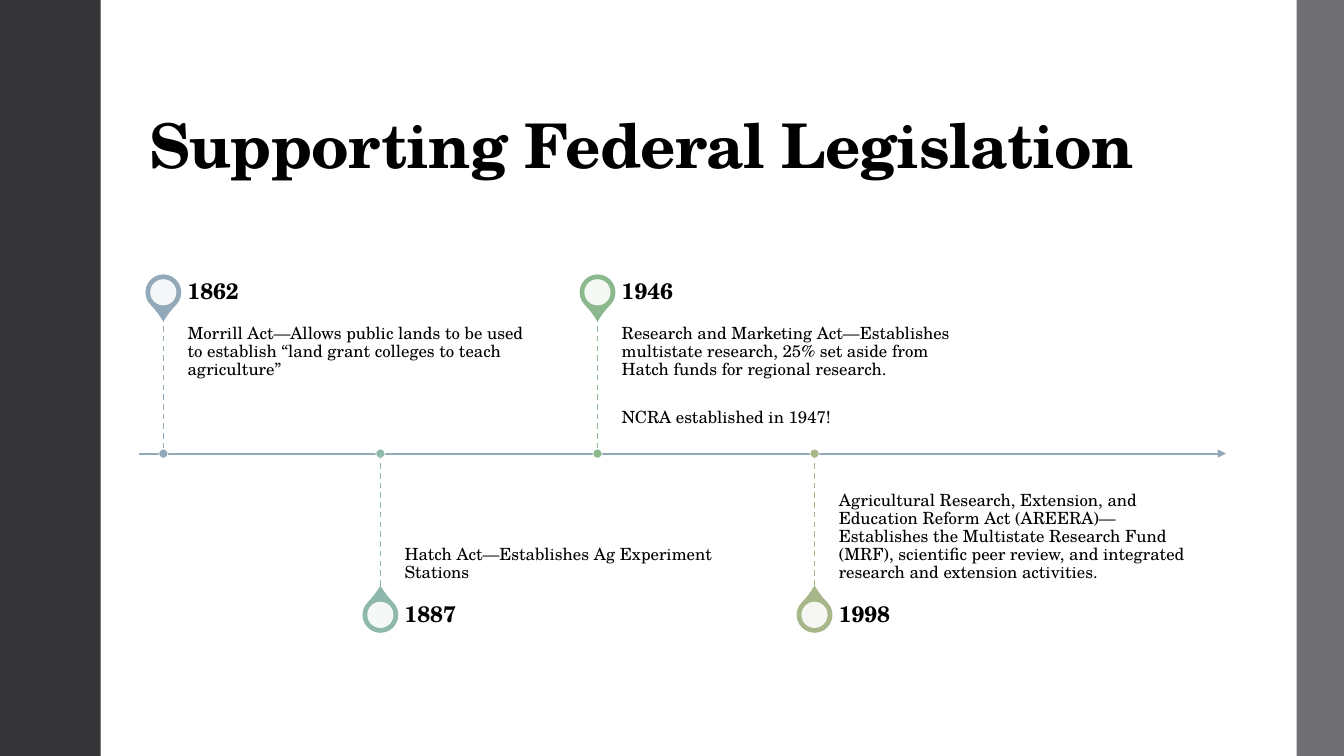
from dataclasses import dataclass

from lxml.etree import SubElement
from pptx import Presentation
from pptx.dml.color import RGBColor
from pptx.enum.dml import MSO_LINE
from pptx.enum.shapes import MSO_CONNECTOR, MSO_SHAPE
from pptx.enum.text import MSO_ANCHOR, PP_ALIGN
from pptx.oxml.ns import qn
from pptx.util import Inches, Pt


@dataclass(frozen=True)
class Theme:
    font: str = "TeX Gyre Schola"
    text: str = "000000"
    white: str = "FFFFFF"
    dark_band: str = "353537"
    gray_band: str = "6F6F74"
    axis: str = "92A9B9"
    title_size: float = 44
    year_size: float = 16
    body_size: float = 12


THEME = Theme()

# Timeline geometry in inches
AXIS_Y = 4.5
AXIS_LEFT, AXIS_RIGHT = 1.38, 12.16
FIRST_X, STEP_X = 1.62, 2.153
STEM = 1.36
PIN_DISTANCE = 1.6
PIN_SIZE, HOLE_SIZE, DOT_SIZE = 0.34, 0.26, 0.09
TEXT_GAP, TEXT_WIDTH, YEAR_HEIGHT = 0.24, 3.59, 0.48

# Year, color, paragraphs; events alternate above and below the axis
EVENTS = [
    ("1862", "92A9B9", ["Morrill Act—Allows public lands to be used to establish "
                        "“land grant colleges to teach agriculture”"]),
    ("1887", "8FB8AD", ["Hatch Act—Establishes Ag Experiment Stations"]),
    ("1946", "8CB88E", ["Research and Marketing Act—Establishes multistate research, "
                        "25% set aside from Hatch funds for regional research.",
                        "NCRA established in 1947!"]),
    ("1998", "A7B789", ["Agricultural Research, Extension, and Education Reform Act "
                        "(AREERA)—Establishes the Multistate Research Fund (MRF), "
                        "scientific peer review, and integrated research and "
                        "extension activities."]),
]


def rgb(color):
    return RGBColor.from_string(color)


def add_filled(slide, kind, left, top, width, height, fill, line=None, line_width=1):
    shape = slide.shapes.add_shape(
        kind, Inches(left), Inches(top), Inches(width), Inches(height))
    shape.shadow.inherit = False
    shape.fill.solid()
    shape.fill.fore_color.rgb = rgb(fill)
    if line:
        shape.line.color.rgb = rgb(line)
        shape.line.width = Pt(line_width)
    else:
        shape.line.fill.background()
    return shape


def add_circle(slide, x, y, size, fill, line=None, line_width=1):
    return add_filled(slide, MSO_SHAPE.OVAL, x - size / 2, y - size / 2,
                      size, size, fill, line, line_width)


def add_line(slide, start, end, color, width):
    connector = slide.shapes.add_connector(
        MSO_CONNECTOR.STRAIGHT, *(Inches(value) for value in (*start, *end)))
    connector.line.color.rgb = rgb(color)
    connector.line.width = Pt(width)
    SubElement(connector._element.spPr, qn("a:effectLst"))
    return connector


def add_text(slide, box, paragraphs, size, bold=False, anchor=MSO_ANCHOR.TOP,
             insets=(0, 0, 0, 0), gap=0):
    shape = slide.shapes.add_textbox(*(Inches(value) for value in box))
    frame = shape.text_frame
    frame.word_wrap = True
    frame.vertical_anchor = anchor
    (frame.margin_left, frame.margin_top,
     frame.margin_right, frame.margin_bottom) = (Inches(value) for value in insets)
    frame.text = "\n".join(paragraphs)
    for index, paragraph in enumerate(frame.paragraphs):
        paragraph.alignment = PP_ALIGN.LEFT
        paragraph.line_spacing = 0.9
        paragraph.space_before = Pt(gap if index else 0)
        for run in paragraph.runs:
            run.font.name = THEME.font
            run.font.size = Pt(size)
            run.font.bold = bold
            run.font.color.rgb = rgb(THEME.text)
    return shape


def add_title(slide, text):
    title = add_text(slide, (1.38, 0.4, 10.78, 1.45), [text], THEME.title_size,
                     bold=True, anchor=MSO_ANCHOR.BOTTOM, insets=(0.1, 0.05, 0.1, 0.05))
    # Slightly tightened letter spacing
    for run in title.text_frame.paragraphs[0].runs:
        run.font._element.set("spc", "-50")


def add_axis(slide):
    axis = add_line(slide, (AXIS_LEFT, AXIS_Y), (AXIS_RIGHT, AXIS_Y), THEME.axis, 1.5)
    SubElement(axis.line._get_or_add_ln(), qn("a:tailEnd"), type="triangle")


def add_pin(slide, x, y, color, rotation):
    pin = add_filled(slide, MSO_SHAPE.TEAR, x - PIN_SIZE / 2, y - PIN_SIZE / 2,
                     PIN_SIZE, PIN_SIZE, color, color, 1.1)
    pin.adjustments[0] = 1.15
    pin.rotation = rotation
    hole = add_circle(slide, x, y, HOLE_SIZE, THEME.white)
    white = hole.fill._xPr.find(qn("a:solidFill")).find(qn("a:srgbClr"))
    SubElement(white, qn("a:alpha"), val="90000")


def add_event(slide, x, above, year, color, paragraphs):
    direction = -1 if above else 1
    pin_y = AXIS_Y + direction * PIN_DISTANCE
    stem_end = AXIS_Y + direction * STEM
    text_left = x + TEXT_GAP

    add_pin(slide, x, pin_y, color, 135 if above else 315)
    add_text(slide, (text_left, min(stem_end, AXIS_Y), TEXT_WIDTH, STEM),
             paragraphs, THEME.body_size,
             anchor=MSO_ANCHOR.TOP if above else MSO_ANCHOR.BOTTOM,
             insets=(0, 0.08, 0.08, 0.12) if above else (0, 0.12, 0, 0.08), gap=21.4)
    add_text(slide, (text_left, pin_y - YEAR_HEIGHT / 2, TEXT_WIDTH, YEAR_HEIGHT),
             [year], THEME.year_size, bold=True, anchor=MSO_ANCHOR.MIDDLE,
             insets=(0, 0, 0.11, 0))
    stem = add_line(slide, (x, min(stem_end, AXIS_Y)), (x, max(stem_end, AXIS_Y)), color, 1)
    stem.line.dash_style = MSO_LINE.DASH
    add_circle(slide, x, AXIS_Y, DOT_SIZE, color, THEME.white, 0.5)


def main():
    presentation = Presentation()
    presentation.slide_width = Inches(13.33)
    presentation.slide_height = Inches(7.5)
    slide = presentation.slides.add_slide(presentation.slide_layouts[6])

    # Side bands
    add_filled(slide, MSO_SHAPE.RECTANGLE, 0, 0, 1, 7.5, THEME.dark_band)
    add_filled(slide, MSO_SHAPE.RECTANGLE, 12.86, 0, 0.47, 7.5, THEME.gray_band)

    add_title(slide, "Supporting Federal Legislation")

    # Timeline
    add_axis(slide)
    for index, event in enumerate(EVENTS):
        add_event(slide, FIRST_X + index * STEP_X, index % 2 == 0, *event)

    presentation.save("out.pptx")


if __name__ == "__main__":
    main()
